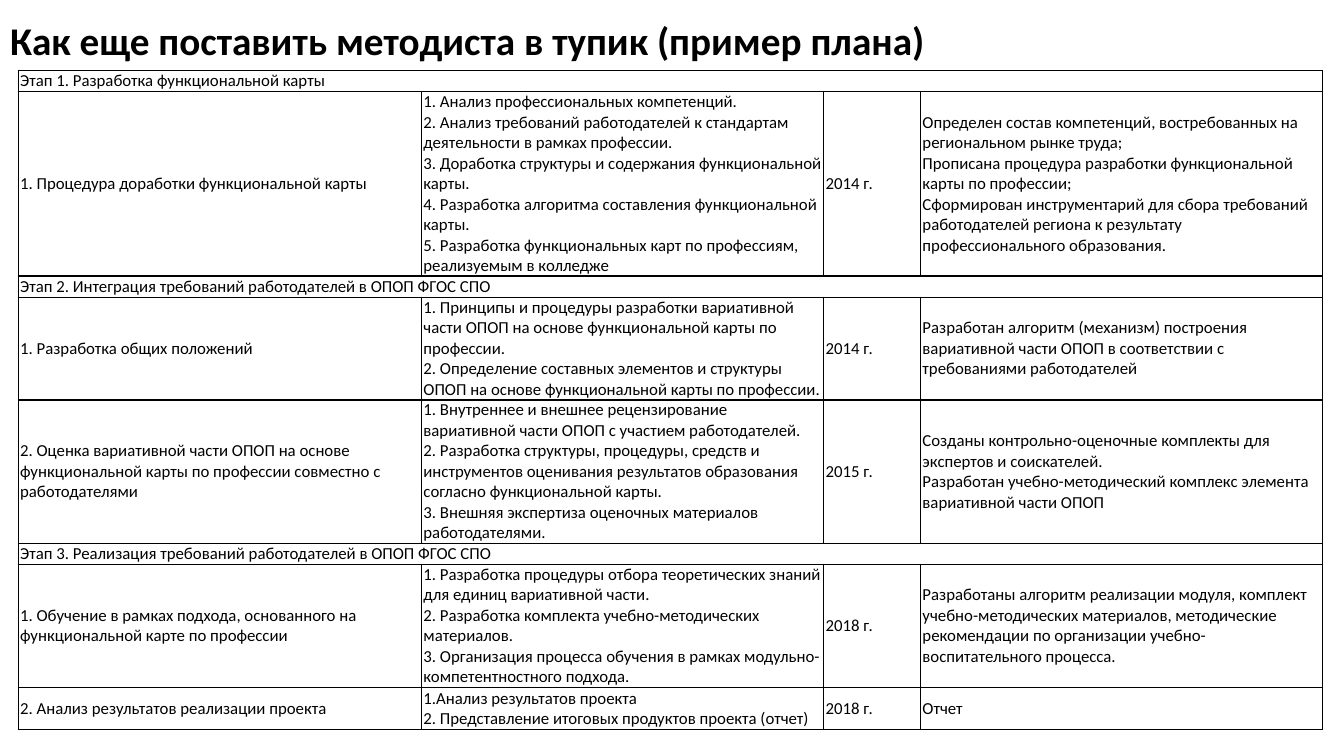
from dataclasses import dataclass

import lxml.etree
import pptx
import pptx.dml.color
import pptx.enum.text
import pptx.oxml.ns
import pptx.util

Inches = pptx.util.Inches
Pt = pptx.util.Pt
BLACK = pptx.dml.color.RGBColor(0, 0, 0)
WHITE = pptx.dml.color.RGBColor(255, 255, 255)
FONT = "Calibri"
COLUMN_WIDTHS = (4.0, 3.99, 0.96, 3.99)
BORDER_SIDES = ("lnL", "lnR", "lnT", "lnB")


@dataclass(frozen=True)
class PlanRow:
    height: float
    texts: tuple[str, ...]


PLAN = (
    PlanRow(0.21, ("Этап 1. Разработка функциональной карты",)),
    PlanRow(1.82, (
        "1. Процедура доработки функциональной карты",
        "1. Анализ профессиональных компетенций.\n"
        "2. Анализ требований работодателей к стандартам деятельности в рамках профессии.\n"
        "3. Доработка структуры и содержания функциональной карты.\n"
        "4. Разработка алгоритма составления функциональной карты.\n"
        "5. Разработка функциональных карт по профессиям, реализуемым в колледже",
        "2014 г.",
        "Определен состав компетенций, востребованных на региональном рынке труда;\n"
        "Прописана процедура разработки функциональной карты по профессии;\n"
        "Сформирован инструментарий для сбора требований работодателей региона "
        "к результату профессионального образования.",
    )),
    PlanRow(0.21, ("Этап 2. Интеграция требований работодателей в ОПОП ФГОС СПО",)),
    PlanRow(1.02, (
        "1. Разработка общих положений",
        "1. Принципы и процедуры разработки вариативной части ОПОП "
        "на основе функциональной карты по профессии.\n"
        "2. Определение составных элементов и структуры ОПОП "
        "на основе функциональной карты по профессии.",
        "2014 г.",
        "Разработан алгоритм (механизм) построения вариативной части ОПОП "
        "в соответствии с требованиями работодателей",
    )),
    PlanRow(1.42, (
        "2. Оценка вариативной части ОПОП на основе функциональной карты "
        "по профессии совместно с работодателями",
        "1. Внутреннее и внешнее рецензирование вариативной части ОПОП "
        "с участием работодателей.\n"
        "2. Разработка структуры, процедуры, средств и инструментов оценивания "
        "результатов образования согласно функциональной карты.\n"
        "3. Внешняя экспертиза оценочных материалов работодателями.",
        "2015 г.",
        "Созданы контрольно-оценочные комплекты для экспертов и соискателей.\n"
        "Разработан учебно-методический комплекс элемента вариативной части ОПОП",
    )),
    PlanRow(0.21, ("Этап 3. Реализация требований работодателей в ОПОП ФГОС СПО",)),
    PlanRow(1.22, (
        "1. Обучение в рамках подхода, основанного на функциональной карте по профессии",
        "1. Разработка процедуры отбора теоретических знаний для единиц вариативной части.\n"
        "2. Разработка комплекта учебно-методических материалов.\n"
        "3. Организация процесса обучения в рамках модульно-компетентностного подхода.",
        "2018 г.",
        "Разработаны алгоритм реализации модуля, комплект учебно-методических материалов, "
        "методические рекомендации по организации учебно-воспитательного процесса.",
    )),
    PlanRow(0.42, (
        "2. Анализ результатов реализации проекта",
        "1.Анализ результатов проекта\n"
        "2. Представление итоговых продуктов проекта (отчет)",
        "2018 г.",
        "Отчет",
    )),
)


def format_text(text_frame, size: float, bold: bool) -> None:
    for paragraph in text_frame.paragraphs:
        paragraph.alignment = pptx.enum.text.PP_ALIGN.LEFT
        paragraph.line_spacing = 1.0
        for run in paragraph.runs:
            run.font.name = FONT
            run.font.size = Pt(size)
            run.font.bold = bold
            run.font.color.rgb = BLACK


def format_cell(cell) -> None:
    cell.margin_left = Inches(0.02)
    cell.margin_right = Inches(0.01)
    cell.margin_top = cell.margin_bottom = Inches(0)
    cell.vertical_anchor = pptx.enum.text.MSO_ANCHOR.MIDDLE
    qn = pptx.oxml.ns.qn
    properties = cell._tc.get_or_add_tcPr()
    for side in BORDER_SIDES:
        border = lxml.etree.SubElement(properties, qn(f"a:{side}"), w=str(Pt(1)))
        fill = lxml.etree.SubElement(border, qn("a:solidFill"))
        lxml.etree.SubElement(fill, qn("a:srgbClr"), val=str(BLACK))
    cell.fill.background()


def add_title(slide) -> None:
    title = slide.shapes.title
    title.left, title.top = Inches(0), Inches(0.11)
    title.width, title.height = Inches(13.33), Inches(0.57)
    title.text_frame.text = "Как еще поставить методиста в тупик (пример плана)"
    title.text_frame.word_wrap = True
    title.text_frame.vertical_anchor = pptx.enum.text.MSO_ANCHOR.TOP
    format_text(title.text_frame, 28, True)


def add_plan(slide) -> None:
    plan = slide.shapes.add_table(
        len(PLAN), len(COLUMN_WIDTHS), Inches(0.18), Inches(0.7),
        Inches(sum(COLUMN_WIDTHS)), Inches(sum(row.height for row in PLAN)),
    ).table
    plan.first_row = plan.horz_banding = False
    for column, width in zip(plan.columns, COLUMN_WIDTHS):
        column.width = Inches(width)
    for table_row, row in zip(plan.rows, PLAN):
        table_row.height = Inches(row.height)
        cells = list(table_row.cells)
        for cell in cells:
            format_cell(cell)
        if len(row.texts) == 1:
            cells[0].merge(cells[-1])
        for cell, text in zip(cells, row.texts):
            cell.text_frame.text = text
            format_text(cell.text_frame, 12, False)


def main() -> None:
    presentation = pptx.Presentation()
    presentation.slide_width = Inches(13.33)
    presentation.slide_height = Inches(7.5)
    slide = presentation.slides.add_slide(presentation.slide_layouts[5])
    slide.background.fill.solid()
    slide.background.fill.fore_color.rgb = WHITE
    add_title(slide)
    add_plan(slide)
    presentation.save("out.pptx")


if __name__ == "__main__":
    main()
